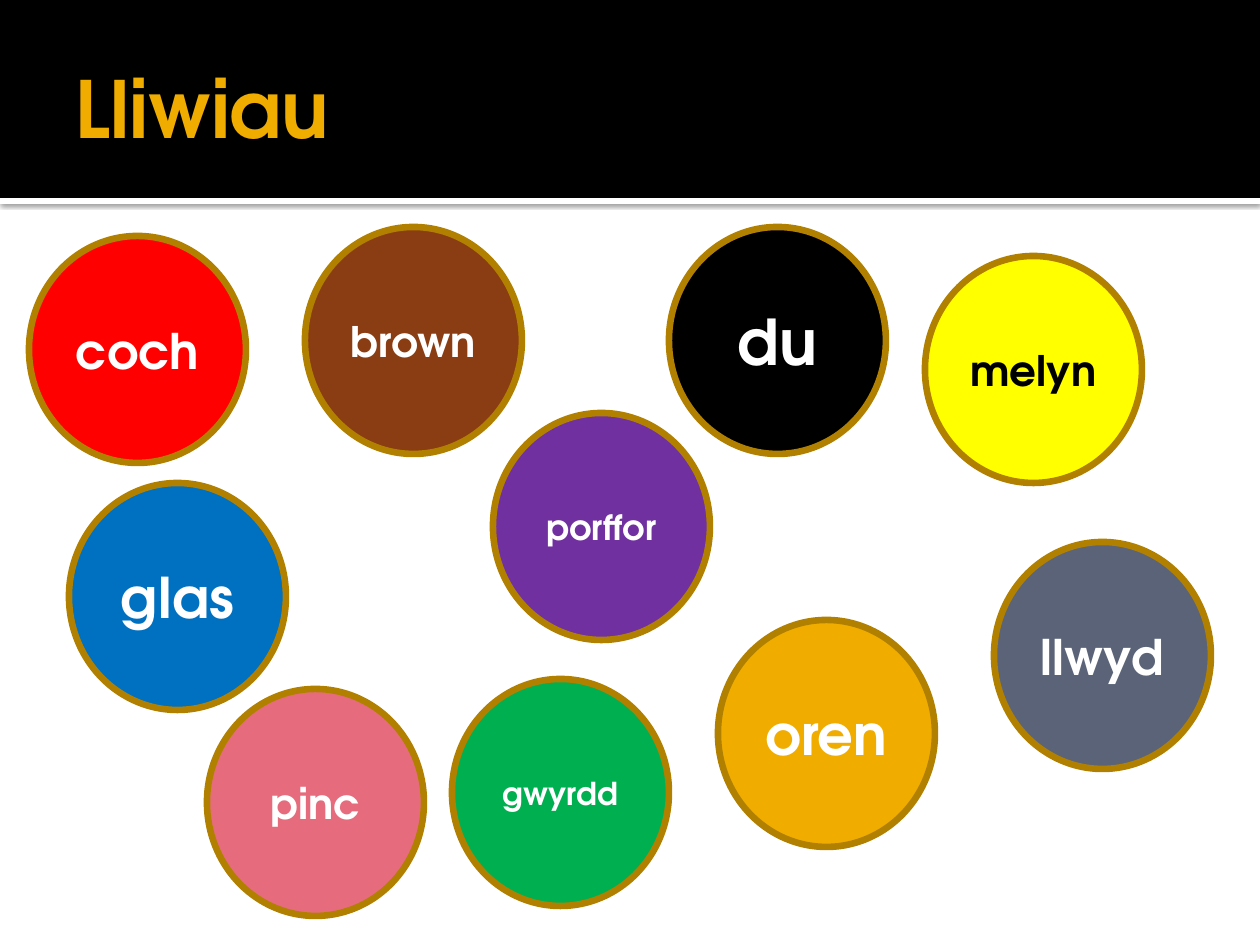
from lxml.etree import SubElement
from pptx import Presentation
from pptx.dml.color import RGBColor
from pptx.enum.shapes import MSO_SHAPE
from pptx.enum.text import MSO_ANCHOR, PP_ALIGN
from pptx.oxml.ns import qn
from pptx.util import Emu, Pt

PX_PER_INCH = 126
FONT = "TeX Gyre Adventor"

WHITE = RGBColor(0xFF, 0xFF, 0xFF)
BLACK = RGBColor(0x00, 0x00, 0x00)
GOLD = RGBColor(0xF0, 0xAD, 0x00)
DARK_GOLD = RGBColor(0xB2, 0x80, 0x00)
RED = RGBColor(0xFF, 0x00, 0x00)
BLUE = RGBColor(0x00, 0x70, 0xC0)
PURPLE = RGBColor(0x70, 0x30, 0xA0)
PINK = RGBColor(0xE6, 0x6C, 0x7D)
BROWN = RGBColor(0x8A, 0x3C, 0x12)
GREEN = RGBColor(0x00, 0xB0, 0x50)
GREY = RGBColor(0x5A, 0x63, 0x78)
YELLOW = RGBColor(0xFF, 0xFF, 0x00)

CIRCLE_W, CIRCLE_H = 217, 227
CIRCLES = [
    ("coch", 29, 26, 28, RED, WHITE),
    ("glas", 69, 273, 32, BLUE, WHITE),
    ("porffor", 493, 203, 20, PURPLE, WHITE),
    ("pinc", 207, 479, 24, PINK, WHITE),
    ("brown", 305, 17, 24, BROWN, WHITE),
    ("gwyrdd", 452, 469, 18, GREEN, WHITE),
    ("du", 669, 17, 36, BLACK, WHITE),
    ("oren", 718, 410, 32, GOLD, WHITE),
    ("llwyd", 994, 332, 28, GREY, WHITE),
    ("melyn", 925, 46, 24, YELLOW, BLACK),
]


def px(n):
    return Emu(round(n * 914400 / PX_PER_INCH))


def set_attrs(obj, values):
    for name, value in values.items():
        setattr(obj, name, value)


def write(sp, text, size, color, align):
    tf = sp.text_frame
    set_attrs(tf, {"word_wrap": True, "vertical_anchor": MSO_ANCHOR.MIDDLE})
    p = tf.paragraphs[0]
    p.alignment = align
    r = p.add_run()
    r.text = text
    set_attrs(r.font, {"name": FONT, "size": Pt(size), "bold": True})
    r.font.color.rgb = color


def add_filled(s, kind, x, y, w, h, color):
    sp = s.shapes.add_shape(kind, px(x), px(y), px(w), px(h))
    sp.shadow.inherit = False
    sp.fill.solid()
    sp.fill.fore_color.rgb = color
    return sp


def add_drop_shadow(sp):
    effects = sp._element.spPr.find(qn("a:effectLst"))
    shadow = SubElement(effects, qn("a:outerShdw"), blurRad=str(Pt(2.5)),
                        dist=str(Pt(0.8)), dir="5400000", rotWithShape="0")
    color = SubElement(shadow, qn("a:srgbClr"), val=str(BLACK))
    SubElement(color, qn("a:alpha"), val="60000")


def add_header(s, x, y, w, h):
    strip = add_filled(s, MSO_SHAPE.RECTANGLE, x, y + h, w, 6, WHITE)
    add_drop_shadow(strip)
    band = add_filled(s, MSO_SHAPE.RECTANGLE, x, y, w, h, BLACK)
    for sp in (strip, band):
        sp.line.fill.background()

    title = s.shapes.title
    band._element.addnext(title._element)
    set_attrs(title, {"left": px(x + 63), "top": px(y + 21),
                      "width": px(w - 126), "height": px(173)})
    set_attrs(title.text_frame, {"margin_left": Pt(7.2), "margin_right": Pt(3.6),
                                 "margin_top": Pt(3.6), "margin_bottom": Pt(3.6)})
    write(title, "Lliwiau", 45, GOLD, PP_ALIGN.LEFT)


def add_colour_circles(s, x, y):
    for word, dx, dy, size, fill, ink in CIRCLES:
        sp = add_filled(s, MSO_SHAPE.OVAL, x + dx, y + dy, CIRCLE_W, CIRCLE_H, fill)
        sp.line.color.rgb = DARK_GOLD
        sp.line.width = Pt(3.78)
        write(sp, word, size, ink, PP_ALIGN.CENTER)


def main():
    prs = Presentation()
    set_attrs(prs, {"slide_width": px(1260), "slide_height": px(945)})
    s = prs.slides.add_slide(prs.slide_layouts[5])
    s.background.fill.solid()
    s.background.fill.fore_color.rgb = WHITE
    add_header(s, 0, 0, 1260, 198)
    add_colour_circles(s, 0, 210)
    prs.save("out.pptx")


if __name__ == "__main__":
    main()
